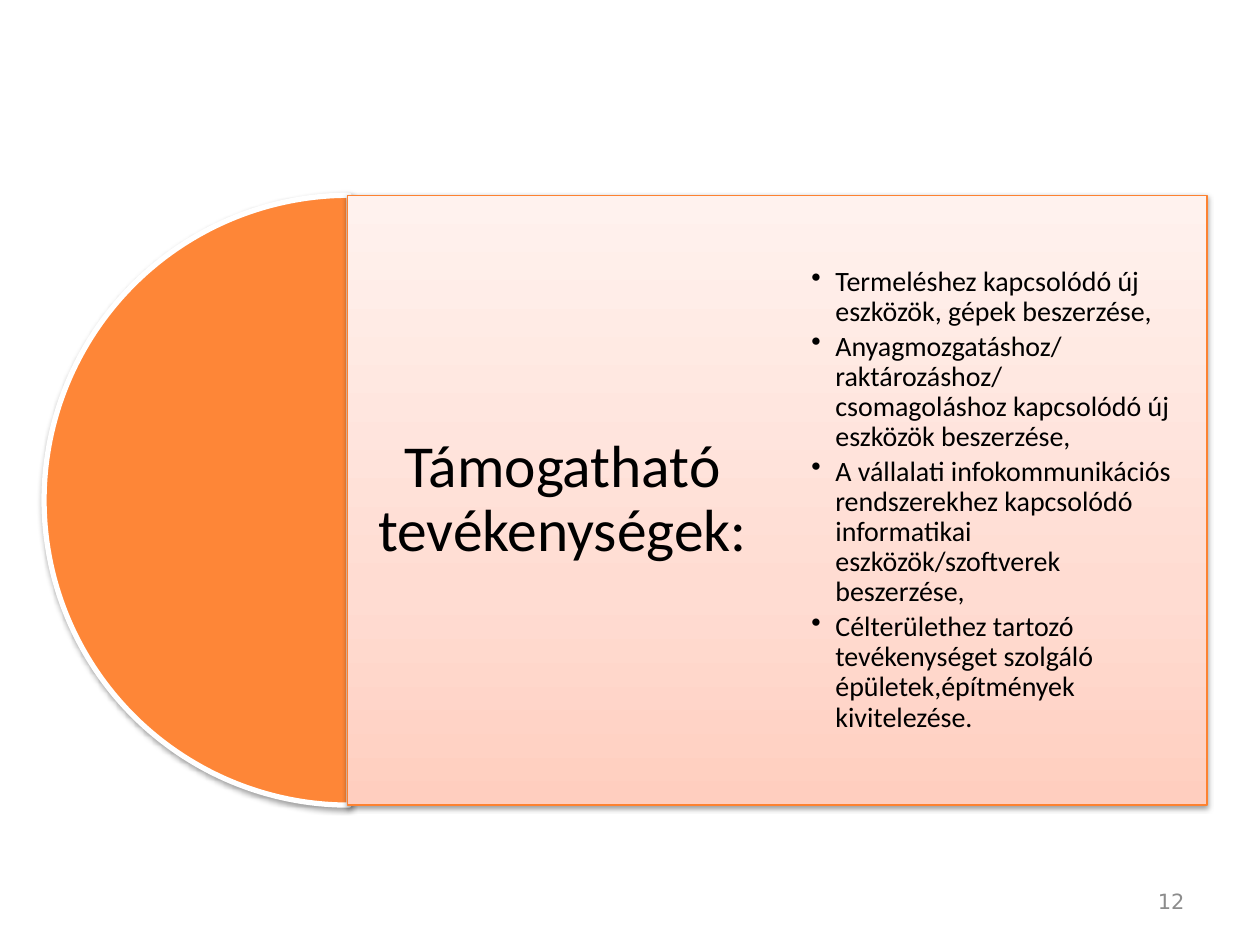
from copy import deepcopy

from lxml import etree
from pptx import Presentation, util as u
from pptx.dml.color import RGBColor
from pptx.enum import shapes, text
from pptx.oxml.ns import qn

ORANGE = RGBColor(0xFE, 0x86, 0x37)
EDGE = RGBColor(0xFD, 0x82, 0x31)
WHITE = RGBColor(0xFF, 0xFF, 0xFF)
BLACK = RGBColor(0, 0, 0)
GREY = RGBColor(0x8C, 0x8C, 0x8C)
PEACH = ((0, RGBColor(0xFF, 0xCE, 0xBF)),
         (0.35, RGBColor(0xFF, 0xDC, 0xD2)),
         (1, RGBColor(0xFF, 0xF2, 0xEE)))

TITLE = "Támogatható tevékenységek:"
ITEMS = (
    "Termeléshez kapcsolódó új eszközök, gépek beszerzése,",
    "Anyagmozgatáshoz/raktározáshoz/csomagoláshoz kapcsolódó új eszközök beszerzése,",
    "A vállalati infokommunikációs rendszerekhez kapcsolódó informatikai "
    "eszközök/szoftverek beszerzése,",
    "Célterülethez tartozó tevékenységet szolgáló épületek,építmények kivitelezése.",
)


def child(node, tag, **attrs):
    return etree.SubElement(node, qn(tag), attrs)


def write(frame, lines, size, color=BLACK, font="Calibri", align=text.PP_ALIGN.LEFT,
          space=None, after=0, bullet=0):
    """Fill a text frame; bullet is the hanging indent in inches."""
    for i, line in enumerate(lines):
        para = frame.paragraphs[0] if i == 0 else frame.add_paragraph()
        if bullet:
            props = para._p.get_or_add_pPr()
            props.set("marL", str(u.Inches(bullet)))
            props.set("indent", str(-u.Inches(bullet)))
            child(props, "a:buChar", char="•")
        para.alignment = align
        para.line_spacing = space
        para.space_after = u.Pt(after)
        run = para.add_run()
        run.text = line
        run.font.size = u.Pt(size)
        run.font.name = font
        run.font.color.rgb = color


class Deck:
    """Places elements by shares of the slide's size."""

    def __init__(self, wide, high):
        self.prs = Presentation()
        self.prs.slide_width, self.prs.slide_height = u.Inches(wide), u.Inches(high)
        self.slide = self.prs.slides.add_slide(self.prs.slide_layouts[6])

    def place(self, x, y, w, h):
        wide, high = self.prs.slide_width, self.prs.slide_height
        return [round(v) for v in (x * wide, y * high, w * wide, h * high)]

    def shape(self, kind, box, line, width):
        item = self.slide.shapes.add_shape(kind, *self.place(*box))
        item.line.color.rgb = line
        item.line.width = u.Pt(width)
        # Soft shadow straight below
        item.shadow.inherit = False
        glow = child(item._element.spPr.find(qn("a:effectLst")), "a:outerShdw",
                     blurRad=str(u.Pt(3.1)), dist=str(u.Pt(1.6)),
                     dir="5400000", rotWithShape="0")
        child(child(glow, "a:srgbClr", val="000000"), "a:alpha", val="38000")
        return item

    def half(self, box):
        pie = self.shape(shapes.MSO_SHAPE.PIE, box, WHITE, 3)
        pie.adjustments[0], pie.adjustments[1] = 54, 162  # 90 to 270 degrees
        pie.fill.solid()
        pie.fill.fore_color.rgb = ORANGE

    def panel(self, box):
        rect = self.shape(shapes.MSO_SHAPE.RECTANGLE, box, EDGE, 0.75)
        rect.fill.gradient()
        rect.fill.gradient_angle = 90
        stops = rect._element.spPr.find(".//" + qn("a:gsLst"))
        stops.append(deepcopy(stops[-1]))
        for stop, (pos, color) in zip(rect.fill.gradient_stops, PEACH):
            stop.position = pos
            stop.color.rgb = color

    def label(self, box, lines, size, pad=None, **style):
        frame = self.slide.shapes.add_textbox(*self.place(*box)).text_frame
        frame.word_wrap = True
        frame.vertical_anchor = text.MSO_ANCHOR.MIDDLE
        if pad is not None:
            frame.margin_left = frame.margin_right = u.Inches(pad)
            frame.margin_top = frame.margin_bottom = u.Inches(pad)
        write(frame, lines, size, **style)


def main():
    deck = Deck(10, 7.5)
    top, high = 1.55 / 7.5, 4.84 / 7.5
    left, wide = 0.276, 0.682
    col = wide / 2

    # Half disc and panel
    deck.half((0.035, top, 0.484, high))
    deck.panel((left, top, wide, high))

    # Heading and list, one per half of the panel
    deck.label((left, top, col, high), [TITLE], 34, pad=0.14,
               align=text.PP_ALIGN.CENTER, space=0.9, after=12)
    deck.label((left + col, top, col, high), ITEMS, 16, pad=0.27,
               space=0.9, after=2.4, bullet=0.19)

    # Page number
    deck.label((0.717, 6.95 / 7.5, 0.233, 0.4 / 7.5), ["12"], 12, color=GREY,
               font="DejaVu Sans", align=text.PP_ALIGN.RIGHT)
    deck.prs.save("out.pptx")


if __name__ == "__main__":
    main()
